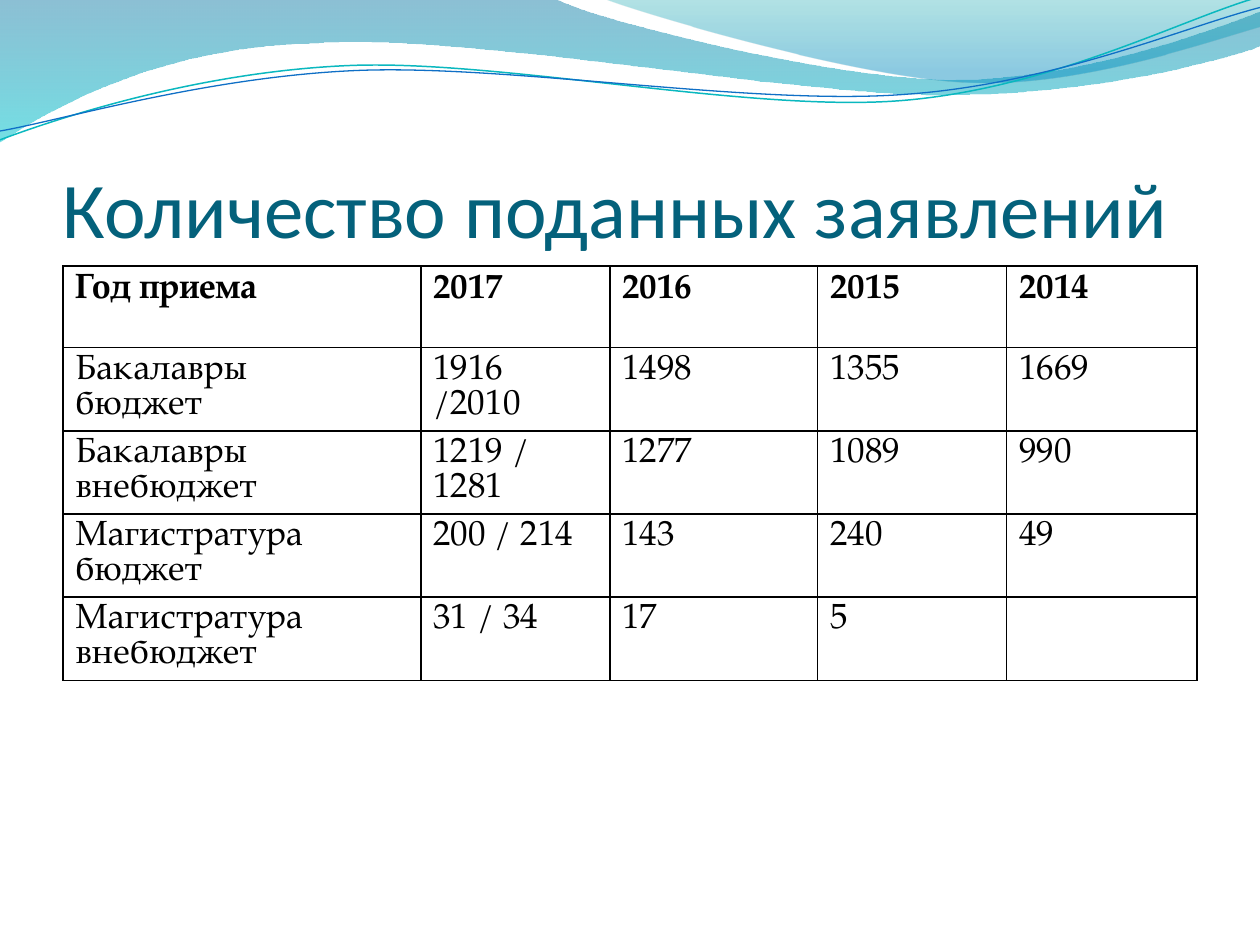
from dataclasses import dataclass
from math import cos, radians, sin
from typing import Any, Optional

from lxml.etree import SubElement
from pptx import Presentation
from pptx.dml.color import RGBColor as RGB
from pptx.enum.text import MSO_ANCHOR as Anchor
from pptx.oxml.ns import qn
from pptx.util import Inches, Pt

COLORS = {
    "title": "04617B", "text": "000000", "border": "000000",
    "deep": "0074A1", "cyan": "00C6CF", "teal": "00A1A9", "sky": "008BBF",
    "teal_line": "0AB8BF", "blue_line": "0F6FC6",
}
TILT = -2.7
COLUMNS = [2.84, 1.5, 1.65, 1.5, 1.51]
ROW_HEIGHTS = [0.65] + [0.66] * 4
ROWS = [
    ["Год приема", "2017", "2016", "2015", "2014"],
    ["Бакалавры\nбюджет", "1916 /2010", "1498", "1355", "1669"],
    ["Бакалавры внебюджет", "1219 / 1281", "1277", "1089", "990"],
    ["Магистратура бюджет", "200 / 214", "143", "240", "49"],
    ["Магистратура внебюджет", "31 / 34", "17", "5", ""],
]


@dataclass
class Stop:
    position: float
    color: str
    alpha: int


@dataclass
class Wave:
    start: tuple
    segments: list
    stops: Optional[list] = None
    line: str = ""
    width: float = 0
    center: tuple = (0, 0)
    tilt: float = 0


WAVES = [
    Wave((0, 0), [
        (4.4, -0.01), (4.76, 0.17, 6.64, 0.63, 7.58, 0.63),
        (8.53, 0.63, 9.58, 0.26, 10, 0.09), (10.01, 0.36),
        (9.83, 0.44, 8.7, 0.76, 7.46, 0.75), (6.22, 0.75, 3.82, 0.28, 2.57, 0.34),
        (1.29, 0.36, 0.46, 0.83, -0.01, 1.13), (0, 0),
    ], [Stop(0, "deep", 45), Stop(1, "cyan", 55)]),
    Wave((4.79, -0.01), [
        (5.09, 0.11, 6.82, 0.62, 7.69, 0.65), (8.56, 0.69, 9.61, 0.32, 10, 0.21),
        (10, 0), (4.79, -0.01),
    ], [Stop(0, "teal", 30), Stop(0.8, "sky", 45)]),
    Wave((0, 1.11), [
        (0.48, 0.93, 1.58, 0.57, 2.77, 0.52), (3.95, 0.47, 5.93, 0.89, 7.13, 0.8),
        (8.33, 0.71, 9.38, 0.15, 9.98, -0.02),
    ], line="teal_line", width=0.85, center=(4.99, 0.58), tilt=TILT),
    Wave((0, 1.04), [
        (0.47, 0.96, 1.64, 0.61, 2.83, 0.56), (4.03, 0.51, 5.97, 0.84, 7.17, 0.75),
        (8.36, 0.67, 9.41, 0.21, 10, 0.06),
    ], line="blue_line", width=0.75, center=(5, 0.59), tilt=TILT),
]


def set_attrs(obj: Any, values: dict) -> None:
    """Set every named attribute of an object."""
    for name, value in values.items():
        setattr(obj, name, value)


def rgb(name: str) -> RGB:
    """Look up a palette colour."""
    return RGB.from_string(COLORS[name])


def untilt(wave: Wave, x: float, y: float) -> tuple:
    """Give a point in EMU as it lies before the wave is rotated."""
    a = radians(-wave.tilt)
    cx, cy = wave.center
    dx, dy = x - cx, y - cy
    return (Inches(cx + dx * cos(a) - dy * sin(a)), Inches(cy + dx * sin(a) + dy * cos(a)))


def outline(s: Any, wave: Wave) -> Any:
    """Build a freeform whose six-number segments are cubic curves."""
    builder = s.shapes.build_freeform(*untilt(wave, *wave.start))
    points = [untilt(wave, *seg[i:i + 2]) for seg in wave.segments
              for i in range(0, len(seg), 2)]
    builder.add_line_segments(points, close=bool(wave.stops))
    sp = builder.convert_to_shape()
    lines = iter(list(sp._element.iter(qn("a:lnTo"))))
    for seg in wave.segments:
        first = next(lines)
        if len(seg) == 6:
            first.tag = qn("a:cubicBezTo")
            for _ in range(2):
                extra = next(lines)
                first.append(extra[0])
                extra.getparent().remove(extra)
    sp.rotation = wave.tilt
    return sp


def draw_wave(s: Any, wave: Wave) -> None:
    """Draw a translucent gradient wave or an open curved line."""
    sp = outline(s, wave)
    sp.shadow.inherit = False
    if not wave.stops:
        sp.fill.background()
        sp.line.color.rgb = rgb(wave.line)
        sp.line.width = Pt(wave.width)
        return
    sp.line.fill.background()
    sp.fill.gradient()
    sp.fill.gradient_angle = 270
    for target, stop in zip(sp.fill.gradient_stops, wave.stops):
        target.position = stop.position
        target.color.rgb = rgb(stop.color)
    for color, stop in zip(sp._element.iter(qn("a:srgbClr")), wave.stops):
        SubElement(color, qn("a:alpha"), val=str(stop.alpha * 1000))


def write(tf: Any, text: str, color: str, font: dict, paragraph: dict) -> None:
    """Write each line of text as a formatted paragraph."""
    for i, line in enumerate(text.split("\n")):
        p = tf.add_paragraph() if i else tf.paragraphs[0]
        set_attrs(p, paragraph)
        r = p.add_run()
        r.text = line
        set_attrs(r.font, font)
        r.font.color.rgb = rgb(color)


def draw_title(s: Any, text: str) -> None:
    """Draw the slide title."""
    tf = s.shapes.add_textbox(Inches(0.5), Inches(0.77), Inches(9), Inches(1.25)).text_frame
    set_attrs(tf, {"word_wrap": True, "vertical_anchor": Anchor.BOTTOM, "margin_left": 0,
                   "margin_right": 0, "margin_top": Inches(0.05), "margin_bottom": 0})
    write(tf, text, "title", {"name": "Calibri", "size": Pt(45)}, {})


def style_cell(cell: Any) -> None:
    """Give a cell thin borders and no fill."""
    for side in ("lnL", "lnR", "lnT", "lnB"):
        ln = SubElement(cell._tc.get_or_add_tcPr(), qn(f"a:{side}"), w=str(Pt(1)))
        SubElement(SubElement(ln, qn("a:solidFill")), qn("a:srgbClr"), val=COLORS["border"])
    cell.fill.background()


def draw_table(s: Any) -> None:
    """Draw the table of applications by year."""
    frame = s.shapes.add_table(len(ROWS), len(COLUMNS), Inches(0.5), Inches(2.11),
                               Inches(sum(COLUMNS)), Inches(sum(ROW_HEIGHTS)))
    table = frame.table
    set_attrs(table, {"first_row": False, "horz_banding": False})
    for column, width in zip(table.columns, COLUMNS):
        column.width = Inches(width)
    for i, (row, height, values) in enumerate(zip(table.rows, ROW_HEIGHTS, ROWS)):
        row.height = Inches(height)
        font = {"name": "TeX Gyre Pagella", "size": Pt(20), "bold": i == 0}
        for cell, value in zip(row.cells, values):
            style_cell(cell)
            if value:
                write(cell.text_frame, value, "text", font, {"line_spacing": Pt(20)})


def main() -> None:
    """Build and save the slide."""
    prs = Presentation()
    set_attrs(prs, {"slide_width": Inches(10), "slide_height": Inches(7.5)})
    s = prs.slides.add_slide(prs.slide_layouts[6])
    for wave in WAVES:
        draw_wave(s, wave)
    draw_title(s, "Количество поданных заявлений")
    draw_table(s)
    prs.save("out.pptx")


if __name__ == "__main__":
    main()
